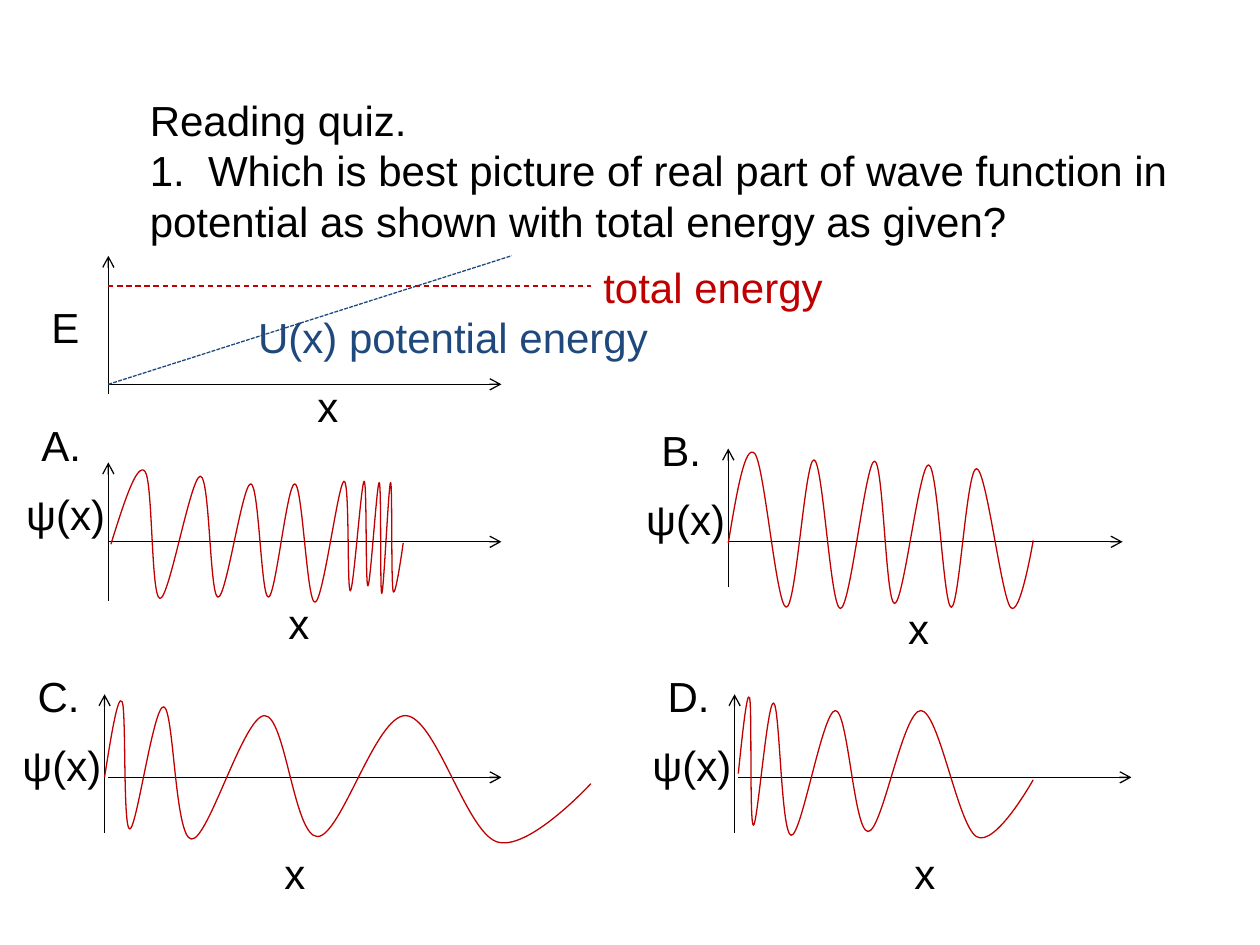
from dataclasses import dataclass

from lxml import etree
from pptx import Presentation
from pptx.dml.color import RGBColor
from pptx.enum import dml, shapes, text
from pptx.oxml import ns
from pptx.util import Inches, Pt


@dataclass(frozen=True)
class Theme:
    font: str = "Arial"
    size: Pt = Pt(24)
    line: Pt = Pt(0.75)
    ink: RGBColor = RGBColor(0, 0, 0)
    red: RGBColor = RGBColor(0xC0, 0, 0)
    blue: RGBColor = RGBColor(0x1F, 0x49, 0x7D)


THEME = Theme()

# Each panel: letter, left of the vertical axis, top of the labels, top of the
# vertical axis, height of the zero line, gap before the horizontal axis, its
# length, and the turning points of the wave measured from the zero line.
PANELS = [
    ("A.", 0.86, 3.52, 3.67, 4.3, 0, 3.12, [
        (0.02, 0.02), (0.29, -0.56), (0.41, 0.45), (0.73, -0.52), (0.87, 0.44),
        (1.13, -0.46), (1.27, 0.44), (1.48, -0.46), (1.64, 0.48), (1.87, -0.48),
        (1.92, 0.39), (2.03, -0.48), (2.06, 0.35), (2.15, -0.47), (2.17, 0.41),
        (2.24, -0.47), (2.26, 0.39), (2.34, 0.01)]),
    ("C.", 0.83, 5.51, 5.51, 6.17, 0.03, 3.12, [
        (0, 0), (0.14, -0.6), (0.2, 0.41), (0.47, -0.56), (0.69, 0.49),
        (1.27, -0.49), (1.69, 0.47), (2.39, -0.49), (3.11, 0.51), (3.86, 0.05)]),
    ("B.", 5.78, 3.56, 3.56, 4.3, 0, 3.13, [
        (0, 0.01), (0.21, -0.7), (0.46, 0.52), (0.68, -0.65), (0.89, 0.53),
        (1.16, -0.64), (1.32, 0.49), (1.59, -0.61), (1.77, 0.52), (1.97, -0.58),
        (2.24, 0.52), (2.42, -0.01)]),
    ("D.", 5.83, 5.51, 5.51, 6.17, 0.03, 3.12, [
        (0.03, -0.03), (0.12, -0.63), (0.15, 0.38), (0.31, -0.59), (0.45, 0.46),
        (0.8, -0.53), (1.06, 0.43), (1.48, -0.53), (1.92, 0.47), (2.37, 0.02)]),
]


def add_text(slide, lines, left, top, width, height=0.5, color=THEME.ink, wrap=False):
    box = slide.shapes.add_textbox(
        Inches(left), Inches(top), Inches(width), Inches(height))
    frame = box.text_frame
    frame.word_wrap = wrap
    frame.auto_size = text.MSO_AUTO_SIZE.SHAPE_TO_FIT_TEXT
    frame.text = "\n".join(lines)
    for paragraph in frame.paragraphs:
        paragraph.font.name = THEME.font
        paragraph.font.size = THEME.size
        paragraph.font.color.rgb = color


def add_line(slide, start, end, color=THEME.ink, dash=None, arrow=False):
    connector = slide.shapes.add_connector(
        shapes.MSO_CONNECTOR.STRAIGHT, *map(Inches, start + end))
    connector.line.color.rgb = color
    connector.line.width = THEME.line
    if dash:
        connector.line.dash_style = dash
    properties = connector._element.spPr
    if arrow:
        etree.SubElement(
            properties.find(ns.qn("a:ln")), ns.qn("a:tailEnd"), type="arrow")
    etree.SubElement(properties, ns.qn("a:effectLst"))


def curve_points(knots):
    """Give two controls and an end per segment; slopes follow the neighbours."""
    slopes = [tuple((after - before) / 6 for before, after in zip(first, last))
              for first, last in zip(knots, knots[2:])] + [(0, 0)]
    points = []
    for index, (start, end) in enumerate(zip(knots, knots[1:])):
        control_end = tuple(e - s for e, s in zip(end, slopes[index]))
        if index:
            control_start = tuple(p + s for p, s in zip(start, slopes[index - 1]))
        else:
            control_start = tuple((p + c) / 2 for p, c in zip(start, control_end))
        points += [control_start, control_end, end]
    return points


def add_wave(slide, left, zero, knots):
    start, *points = [(Inches(left + x), Inches(zero + y))
                      for x, y in knots[:1] + curve_points(knots)]
    builder = slide.shapes.build_freeform(*start)
    builder.add_line_segments(points, close=False)
    wave = builder.convert_to_shape()
    # Turn every three straight pieces into one cubic curve
    pieces = list(wave._element.iter(ns.qn("a:lnTo")))
    for first, *others in zip(pieces[::3], pieces[1::3], pieces[2::3]):
        curve = etree.Element(ns.qn("a:cubicBezTo"))
        first.addprevious(curve)
        for piece in (first, *others):
            curve.append(piece[0])
            piece.getparent().remove(piece)
    wave.shadow.inherit = False
    wave.fill.background()
    wave.line.color.rgb = THEME.red
    wave.line.width = THEME.line


def add_question(slide, left, top, width, height):
    add_text(slide, [
        "Reading quiz.",
        "1.  Which is best picture of real part of wave function in "
        "potential as shown with total energy as given?",
    ], left, top, width, height, wrap=True)


def add_energy_diagram(slide, left, top):
    base = top + 1.02
    add_line(slide, (left, top + 1.1), (left, top), arrow=True)
    add_text(slide, ["E"], left - 0.55, top + 0.31, 0.43)
    add_line(slide, (left, base), (left + 3.12, base), arrow=True)
    add_line(slide, (left, base), (left + 3.2, top), THEME.blue,
             dml.MSO_LINE.SQUARE_DOT)
    add_line(slide, (left, top + 0.24), (left + 3.83, top + 0.24), THEME.red,
             dml.MSO_LINE.DASH)
    add_text(slide, ["x"], left + 1.56, top + 0.94, 0.37)
    add_text(slide, ["U(x) potential energy"], left + 1.09, top + 0.39, 3.33,
             color=THEME.blue)
    add_text(slide, ["total energy"], left + 3.83, top, 1.96, color=THEME.red)


def add_wave_panel(slide, letter, left, top, axis_top, zero, gap, length, knots):
    # Axes
    add_line(slide, (left, axis_top + 1.1), (left, axis_top), arrow=True)
    add_line(slide, (left + gap, zero), (left + gap + length, zero), arrow=True)
    # Labels
    add_text(slide, ["x"], left + 1.33, top + 1.17, 0.37)
    add_text(slide, ["ψ(x)"], left - 0.75, top + 0.31, 0.83)
    add_text(slide, [letter], left - 0.63, top - 0.24, 0.62)
    # Wave function
    add_wave(slide, left, zero, knots)


def main():
    presentation = Presentation()
    presentation.slide_width = Inches(10)
    presentation.slide_height = Inches(7.5)
    slide = presentation.slides.add_slide(presentation.slide_layouts[6])
    add_question(slide, 1.09, 0.7, 8.91, 1.31)
    add_energy_diagram(slide, 0.86, 2.03)
    for panel in PANELS:
        add_wave_panel(slide, *panel)
    presentation.save("out.pptx")


if __name__ == "__main__":
    main()
